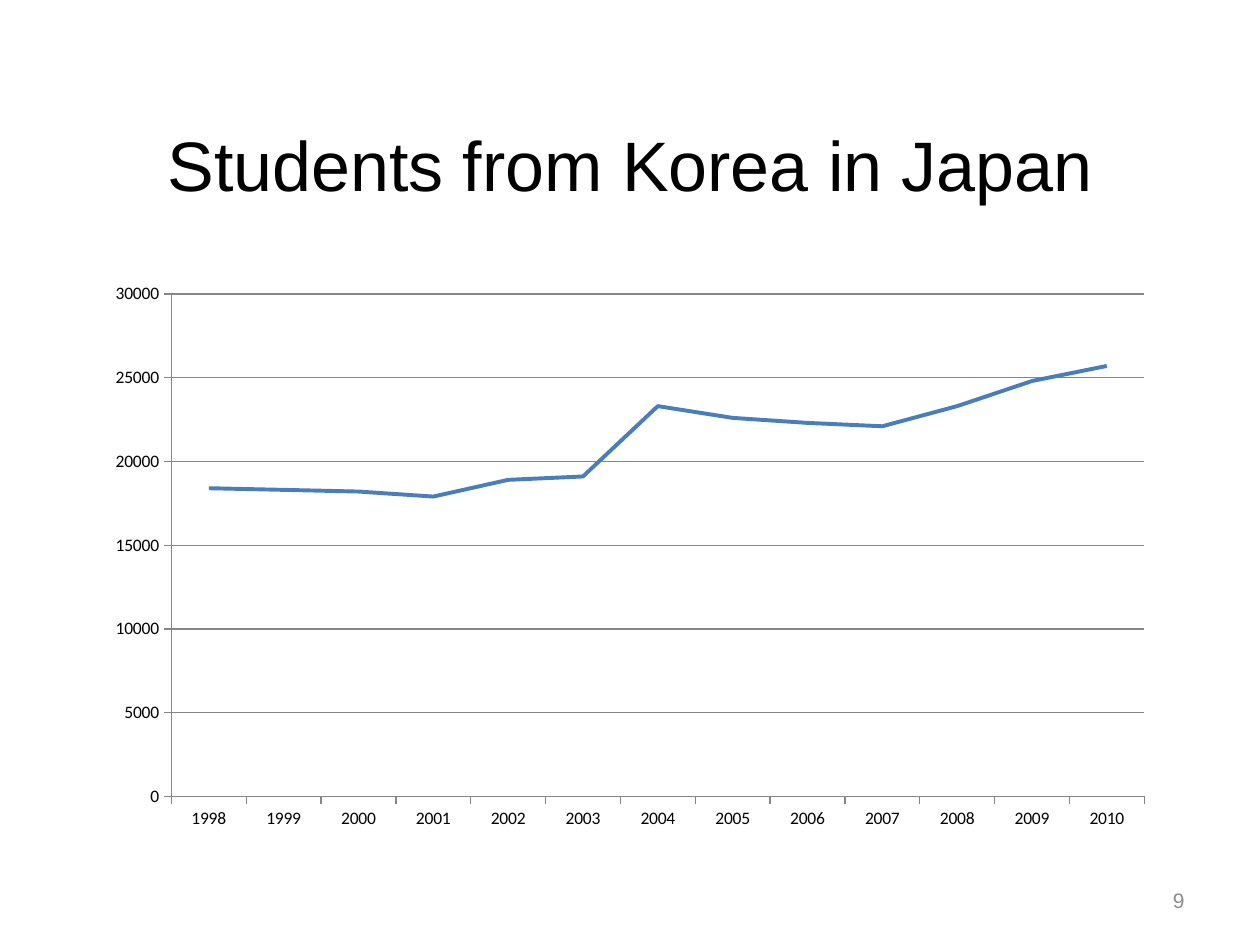
from pptx import Presentation
from pptx.chart.data import CategoryChartData
from pptx.dml.color import RGBColor
from pptx.enum import chart as charts, text
from pptx.util import Cm, Pt

BLACK = RGBColor(0x00, 0x00, 0x00)
NUMBER_GREY = RGBColor(0x8C, 0x8C, 0x8C)
AXIS_GREY = RGBColor(0x86, 0x86, 0x86)
LINE_BLUE = RGBColor(0x4A, 0x7E, 0xBB)

YEARS = range(1998, 2011)
STUDENTS = [18400, 18300, 18200, 17900, 18900, 19100, 23300,
            22600, 22300, 22100, 23300, 24800, 25700]


def write(frame, wording, size, color, align):
    frame.text = wording
    frame.word_wrap = True
    frame.vertical_anchor = text.MSO_ANCHOR.MIDDLE
    paragraph = frame.paragraphs[0]
    paragraph.alignment = align
    font = paragraph.runs[0].font
    font.name, font.size, font.color.rgb = "Arial", Pt(size), color


def place_title(slide, left, top, width, height):
    title = slide.shapes.title
    title.left, title.top, title.width, title.height = left, top, width, height
    write(title.text_frame, "Students from Korea in Japan", 40, BLACK,
          text.PP_ALIGN.CENTER)


def place_page_number(slide, left, top, width, height):
    number = slide.shapes.add_textbox(left, top, width, height)
    write(number.text_frame, "9", 12, NUMBER_GREY, text.PP_ALIGN.RIGHT)


def place_student_chart(slide, left, top, width, height):
    data = CategoryChartData()
    data.categories = [str(year) for year in YEARS]
    data.add_series("Series 1", STUDENTS)
    chart = slide.shapes.add_chart(charts.XL_CHART_TYPE.LINE, left, top,
                                   width, height, data).chart
    chart.has_legend = False
    chart.has_title = False
    chart.font.name, chart.font.size = "Calibri", Pt(10)
    chart.font.color.rgb = BLACK

    years, counts = chart.category_axis, chart.value_axis
    counts.minimum_scale, counts.maximum_scale = 0, 30000
    counts.major_unit = 5000
    counts.has_major_gridlines = True
    for axis in (years, counts):
        axis.major_tick_mark = charts.XL_TICK_MARK.OUTSIDE
    for line in (years.format.line, counts.format.line,
                 counts.major_gridlines.format.line):
        line.color.rgb = AXIS_GREY
        line.width = Pt(0.75)

    chart.plots[0].vary_by_categories = False
    students = chart.plots[0].series[0]
    students.smooth = False
    students.marker.style = charts.XL_MARKER_STYLE.NONE
    students.format.line.color.rgb = LINE_BLUE
    students.format.line.width = Pt(2.25)


def main():
    deck = Presentation()
    deck.slide_width, deck.slide_height = Cm(25.4), Cm(19.05)
    slide = deck.slides.add_slide(deck.slide_layouts[5])
    margin = Cm(1.9)
    content_width = deck.slide_width - 2 * margin
    place_title(slide, margin, Cm(1.7), content_width, Cm(3.18))
    place_student_chart(slide, margin, Cm(5.5), content_width, Cm(11.43))
    place_page_number(slide, Cm(18.2), Cm(17.65), Cm(5.93), Cm(1.01))
    deck.save("out.pptx")


if __name__ == "__main__":
    main()
